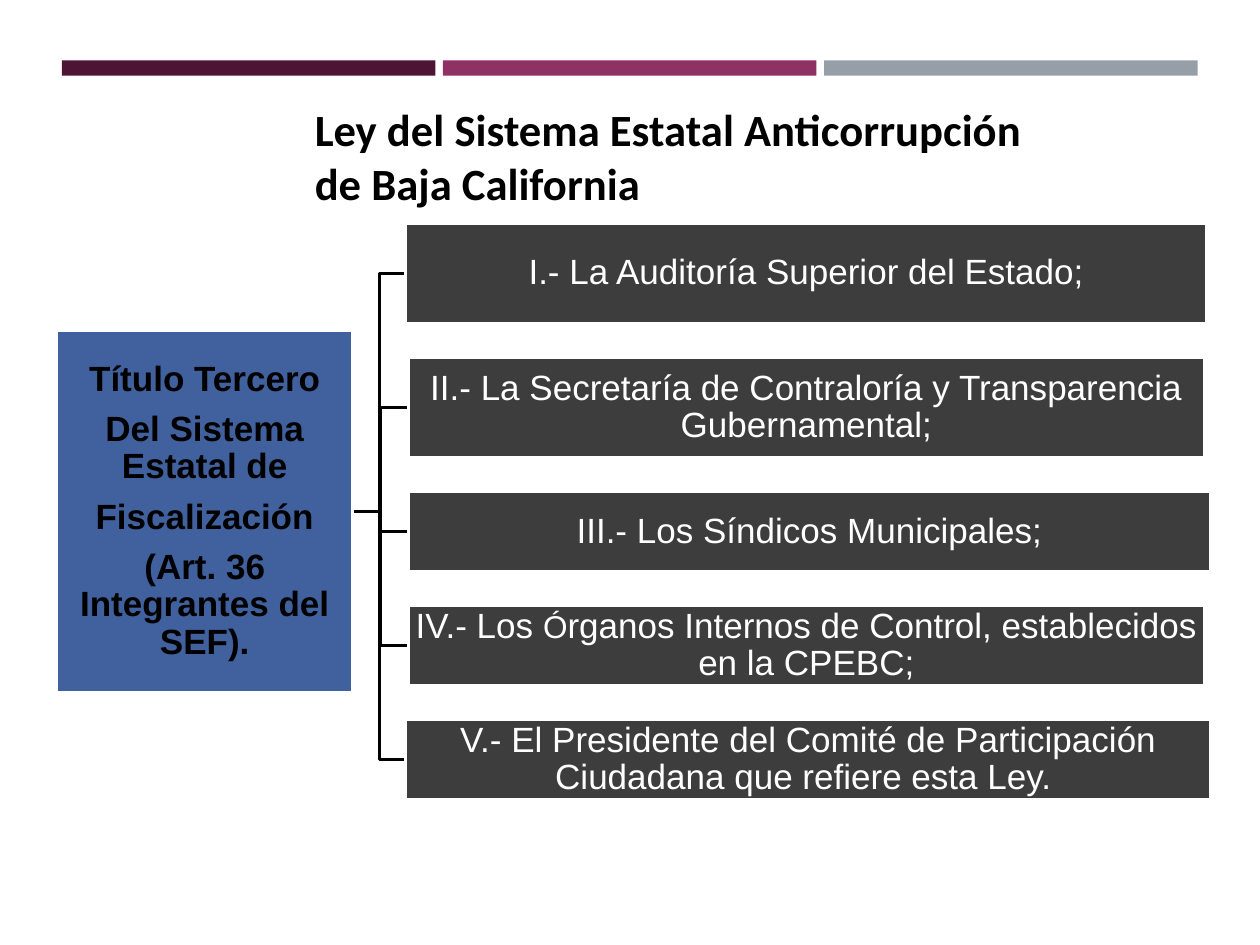
from pptx import Presentation
from pptx.dml.color import RGBColor
from pptx.enum.shapes import MSO_SHAPE
from pptx.enum.text import MSO_ANCHOR, PP_ALIGN
from pptx.util import Inches, Pt


def color(hex_code):
    return RGBColor.from_string(hex_code)


def write(shape, paragraphs, font="Arial", size=20, ink="FFFFFF", bold=False,
          align=PP_ALIGN.CENTER, anchor=MSO_ANCHOR.MIDDLE, margins=(0.01, 0.01),
          spacing=0.9, after=7):
    """Fill a shape with paragraphs, each a list of (text, size or None) runs."""
    frame = shape.text_frame
    frame.word_wrap = True
    frame.vertical_anchor = anchor
    frame.margin_left = frame.margin_right = Inches(margins[0])
    frame.margin_top = frame.margin_bottom = Inches(margins[1])
    for index, runs in enumerate(paragraphs):
        para = frame.add_paragraph() if index else frame.paragraphs[0]
        para.alignment = align
        para.line_spacing = spacing
        para.space_after = Pt(after)
        for text, own_size in runs:
            span = para.add_run()
            span.text = text
            span.font.name = font
            span.font.size = Pt(own_size or size)
            span.font.bold = bold
            span.font.color.rgb = color(ink)


def add_block(left, top, width, height, fill, border=None):
    """Add a plain rectangle measured in grid cells."""
    place = [round(cells * cell) for cells in (left, top, width, height)]
    block = page.shapes.add_shape(MSO_SHAPE.RECTANGLE, *place)
    block.shadow.inherit = False
    block.fill.solid()
    block.fill.fore_color.rgb = color(fill)
    if border:
        block.line.color.rgb = color(border)
        block.line.width = Pt(1.75)
    else:
        block.line.fill.background()
    return block


deck = Presentation()
deck.slide_width, deck.slide_height = Inches(10), Inches(7.5)
page = deck.slides.add_slide(deck.slide_layouts[6])

# Grid of 100 columns by 75 rows
cell = deck.slide_width // 100

# Coloured bars along the top
for column, fill in enumerate(("4D1434", "903163", "969FA7")):
    add_block(4.9 + column * 30.25, 4.8, 29.65, 1.2, fill)

# Members of the system: left, width, height, runs
members = [
    (32.2, 63.6, 8, [("I.- La Auditoría Superior del Estado;", None)]),
    (32.4, 63.2, 8, [("II.- La Secretaría de Contraloría y Transparencia "
                      "Gubernamental;", None)]),
    (32.4, 63.7, 6.4, [("III.- Los Síndicos Municipales;", None)]),
    (32.4, 63.2, 6.4, [("IV.- Los ", None), ("Ó", 18),
                       ("rganos Internos de Control, establecidos en la CPEBC;",
                        None)]),
    (32.2, 63.9, 6.4, [("V.- El Presidente del Comité de Participación "
                        "Ciudadana que refiere esta Ley. ", None)]),
]
first_top, last_bottom = 17.7, 63.5
gap = (last_bottom - first_top - sum(member[2] for member in members)) / 4
tops = [first_top + sum(member[2] + gap for member in members[:row])
        for row in range(len(members))]

# Brackets from the title block to each member
root_left, root_top, root_width, root_height = 4.5, 26.2, 23.5, 28.8
start_x, start_y = root_left + root_width, root_top + root_height / 2
for (left, width, height, runs), top in zip(members, tops):
    middle_x, end_y = (start_x + left) / 2, top + height / 2
    corners = [(middle_x, start_y), (middle_x, end_y), (left, end_y)]
    builder = page.shapes.build_freeform(round(start_x * cell),
                                         round(start_y * cell))
    builder.add_line_segments([(round(x * cell), round(y * cell))
                               for x, y in corners], close=False)
    bracket = builder.convert_to_shape()
    bracket.shadow.inherit = False
    bracket.fill.background()
    bracket.line.color.rgb = color("000000")
    bracket.line.width = Pt(1.75)

# Title block on the left
root = add_block(root_left, root_top, root_width, root_height, "40619D", "FFFFFF")
root_lines = ("Título Tercero", "Del Sistema Estatal de", "Fiscalización",
              "(Art. 36 Integrantes del SEF).")
write(root, [[(line, None)] for line in root_lines], ink="000000", bold=True)

# Member blocks
for (left, width, height, runs), top in zip(members, tops):
    write(add_block(left, top, width, height, "3D3D3D", "FFFFFF"), [runs])

# Heading
heading = page.shapes.add_textbox(*[round(cells * cell)
                                    for cells in (24, 7.6, 69.6, 9.6)])
heading_lines = ("Ley del Sistema Estatal Anticorrupción", "de Baja California")
write(heading, [[(line, None)] for line in heading_lines], font="Calibri",
      size=25.5, ink="000000", bold=True, align=PP_ALIGN.LEFT,
      anchor=MSO_ANCHOR.TOP, margins=(0.1, 0.05), spacing=1.0, after=0)

deck.save("out.pptx")
